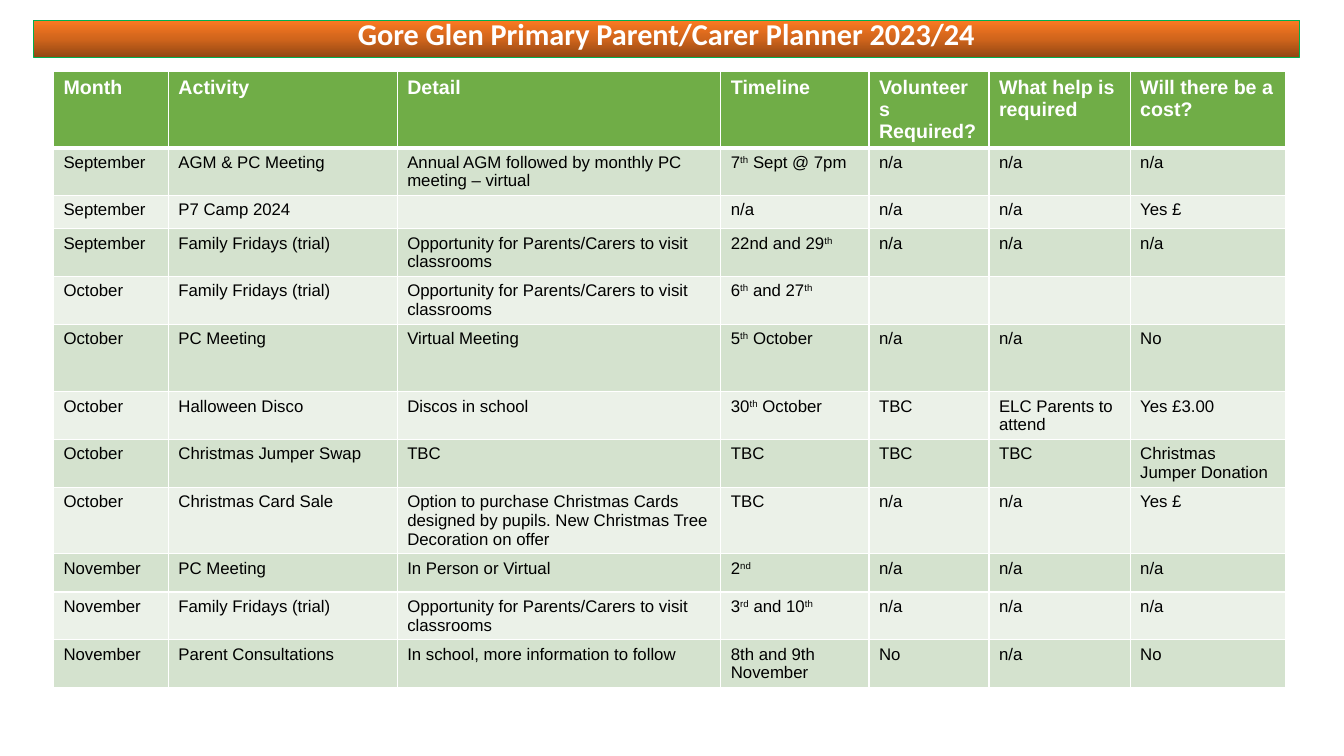
from lxml import etree
from pptx import Presentation
from pptx import util as u
from pptx.dml.color import RGBColor
from pptx.enum import text
from pptx.oxml import ns

WIDTHS = [1.14, 2.27, 3.21, 1.47, 1.19, 1.4, 1.54]
HEIGHTS = [0.28] + [0.33] * 4 + [0.67, 0.33] + [0.37] * 2 + [0.38] * 3
VISIT = "Opportunity for Parents/Carers to visit classrooms"
FRIDAY = "Family Fridays (trial)"
ROWS = [
    ["Month", "Activity", "Detail", "Timeline", "Volunteers Required?",
     "What help is required", "Will there be a cost?"],
    ["September", "AGM & PC Meeting",
     "Annual AGM followed by monthly PC meeting – virtual",
     "7^th^ Sept @ 7pm", "n/a", "n/a", "n/a"],
    ["September", "P7 Camp 2024", "", "n/a", "n/a", "n/a", "Yes £"],
    ["September", FRIDAY, VISIT, "22nd and 29^th", "n/a", "n/a", "n/a"],
    ["October", FRIDAY, VISIT, "6^th^ and 27^th", "", "", ""],
    ["October", "PC Meeting", "Virtual Meeting", "5^th^ October",
     "n/a", "n/a", "No"],
    ["October", "Halloween Disco", "Discos in school", "30^th^ October",
     "TBC", "ELC Parents to attend", "Yes £3.00"],
    ["October", "Christmas Jumper Swap", "TBC", "TBC", "TBC", "TBC",
     "Christmas Jumper Donation"],
    ["October", "Christmas Card Sale",
     "Option to purchase Christmas Cards designed by pupils. "
     "New Christmas Tree Decoration on offer", "TBC", "n/a", "n/a", "Yes £"],
    ["November", "PC Meeting", "In Person or Virtual", "2^nd",
     "n/a", "n/a", "n/a"],
    ["November", FRIDAY, VISIT, "3^rd^ and 10^th", "n/a", "n/a", "n/a"],
    ["November", "Parent Consultations",
     "In school, more information to follow", "8th and 9th November",
     "No", "n/a", "No"],
]


def rgb(code):
    return RGBColor.from_string(code)


def add(parent, tag, **attrs):
    return etree.SubElement(parent, ns.qn(tag), attrs)


class Planner:
    white, black, head = "FFFFFF", "000000", "70AD47"
    bands = ["EBF1E8", "D4E2CE"]
    blend = [("0", "914613"), ("50000", "D1651C"), ("100000", "FB7A22")]

    def __init__(self, deck):
        self.slide = deck.slides.add_slide(deck.slide_layouts[0])
        sub = self.slide.placeholders[1].element
        sub.getparent().remove(sub)

    def style(self, run, font, size, color, bold):
        run.font.name = font
        run.font.size = u.Pt(size)
        run.font.color.rgb = rgb(color)
        run.font.bold = bold

    def title(self, words, left, top, width, height):
        bar = self.slide.shapes.title
        bar.left, bar.top = u.Inches(left), u.Inches(top)
        bar.width, bar.height = u.Inches(width), u.Inches(height)
        bar.fill.gradient()
        bar.fill.gradient_angle = 90
        stops = bar.element.find(".//" + ns.qn("a:gsLst"))
        stops.clear()
        for pos, color in self.blend:
            add(add(stops, "a:gs", pos=pos), "a:srgbClr", val=color)
        bar.line.color.rgb = rgb("00B050")
        bar.line.width = u.Pt(0.75)
        frame = bar.text_frame
        frame.text = words
        frame.word_wrap = True
        frame.auto_size = text.MSO_AUTO_SIZE.NONE
        frame.vertical_anchor = text.MSO_ANCHOR.BOTTOM
        para = frame.paragraphs[0]
        para.alignment = text.PP_ALIGN.CENTER
        para.line_spacing = 0.9
        self.style(para.runs[0], "Calibri", 21.6, self.white, True)

    def border(self, cell, top, bottom):
        props = cell._tc.get_or_add_tcPr()
        sides = {"L": 1, "R": 1, "T": top, "B": bottom}
        for side, width in sides.items():
            line = add(props, "a:ln" + side, w=str(u.Pt(width)))
            add(add(line, "a:solidFill"), "a:srgbClr", val=self.white)

    def cell(self, cell, words, row):
        first = row == 0
        size = 14 if first else 12
        self.border(cell, 3 if row == 1 else 1, 3 if first else 1)
        cell.fill.solid()
        cell.fill.fore_color.rgb = rgb(self.head if first else self.bands[row % 2])
        para = cell.text_frame.paragraphs[0]
        if not words:
            add(para._p, "a:endParaRPr", sz=str(size * 100))
            return
        for spot, part in enumerate(words.split("^")):
            if part:
                run = para.add_run()
                run.text = part
                self.style(run, "Arial", size, self.white if first else self.black, first)
                if spot % 2:
                    run.font._element.set("baseline", "30000")

    def table(self, rows, left, top):
        grid = self.slide.shapes.add_table(
            len(rows), len(WIDTHS), u.Inches(left), u.Inches(top),
            u.Inches(sum(WIDTHS)), u.Inches(sum(HEIGHTS))).table
        for col, width in zip(grid.columns, WIDTHS):
            col.width = u.Inches(width)
        for line, height in zip(grid.rows, HEIGHTS):
            line.height = u.Inches(height)
        for row, items in enumerate(rows):
            for col, words in enumerate(items):
                self.cell(grid.cell(row, col), words, row)


def main():
    deck = Presentation()
    deck.slide_width, deck.slide_height = u.Inches(13.33), u.Inches(7.5)
    page = Planner(deck)
    page.title("Gore Glen Primary Parent/Carer Planner 2023/24",
               0.33, 0.2, 12.56, 0.37)
    page.table(ROWS, 0.53, 0.71)
    deck.save("out.pptx")


if __name__ == "__main__":
    main()
